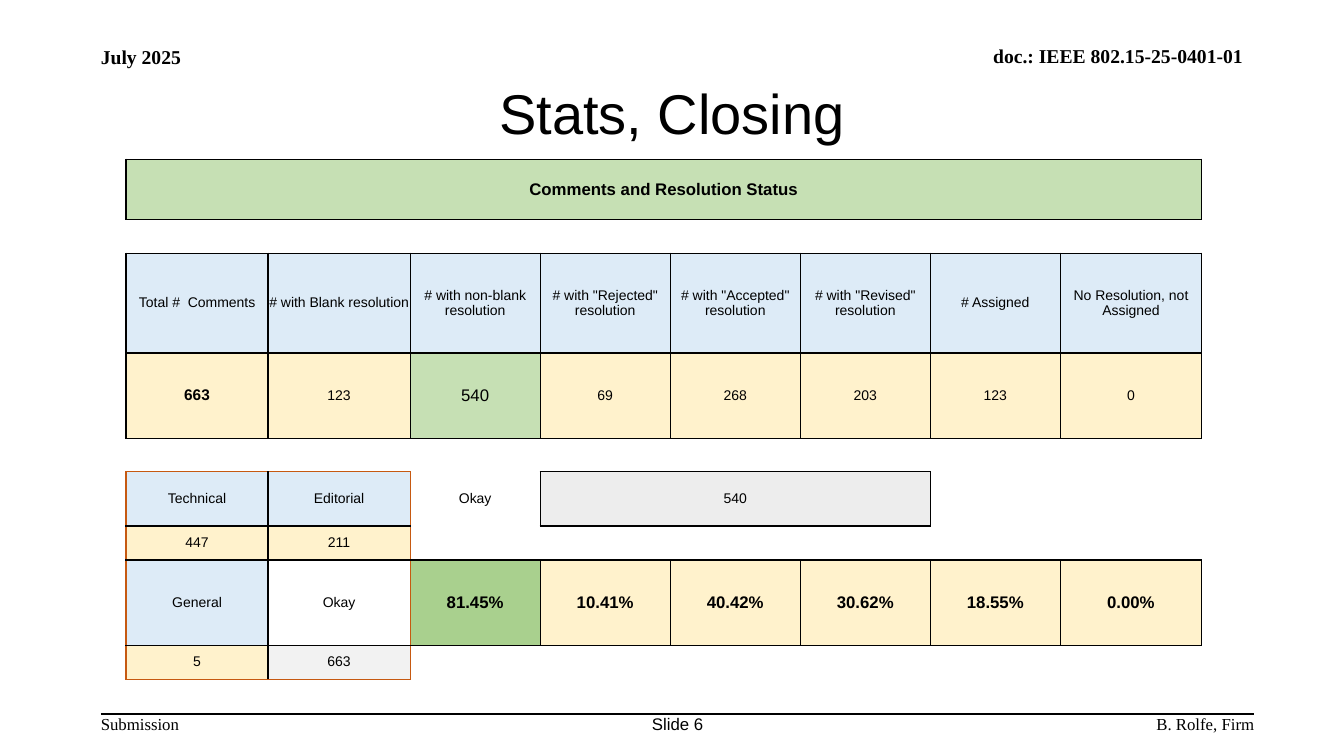
from lxml.etree import SubElement
from pptx import Presentation
from pptx.dml.color import RGBColor
from pptx.enum.shapes import MSO_CONNECTOR as Connector
from pptx.enum.text import MSO_ANCHOR as Anchor, PP_ALIGN as Align
from pptx.oxml.ns import qn
from pptx.util import Pt

BLACK, ORANGE = "000000", "C65911"
GREEN, DARK_GREEN = "C6E0B4", "A9D08E"
BLUE, CREAM, GRAY, PALE_GRAY, WHITE = "DDEBF7", "FFF2CC", "EDEDED", "F2F2F2", "FFFFFF"
SERIF, SANS = "Times New Roman", "Arial"

COLUMN_WIDTHS = [101.5] * 2 + [92.9] * 5 + [100.8]
ROW_HEIGHTS = [42.7, 24.3, 71.3, 60.9, 24.1, 38.6, 24.3, 60.9, 24.3]
BREAKDOWN_ROWS, BREAKDOWN_COLUMNS = range(5, 9), range(2)
SIDES = {"L": (0, -1), "R": (0, 1), "T": (-1, 0), "B": (1, 0)}

HEADINGS = ["Total #  Comments", "# with Blank resolution", "# with non-blank resolution",
            '# with "Rejected" resolution', '# with "Accepted" resolution',
            '# with "Revised" resolution', "# Assigned", "No Resolution, not Assigned"]
COUNTS = ["123", "69", "268", "203", "123", "0"]
SHARES = ["10.41%", "40.42%", "30.62%", "18.55%", "0.00%"]


def color(hex_text):
    return RGBColor.from_string(hex_text)


def write(frame, text, size=10, font=SANS, bold=False, align=Align.CENTER, anchor=Anchor.MIDDLE):
    frame.vertical_anchor = anchor
    paragraph = frame.paragraphs[0]
    paragraph.alignment = align
    run = paragraph.add_run()
    run.text = text
    run.font.size, run.font.name, run.font.bold = Pt(size), font, bold
    run.font.color.rgb = color(BLACK)


def add_label(slide, text, left, top, width, height, **text_format):
    frame = slide.shapes.add_textbox(Pt(left), Pt(top), Pt(width), Pt(height)).text_frame
    frame.word_wrap = True
    frame.margin_left = frame.margin_right = frame.margin_top = frame.margin_bottom = 0
    write(frame, text, **text_format)


def add_rule(slide, left, right, y):
    rule = slide.shapes.add_connector(Connector.STRAIGHT, Pt(left), Pt(y), Pt(right), Pt(y))
    rule.line.color.rgb = color(BLACK)
    rule.line.width = Pt(1)
    SubElement(rule._element.spPr, qn("a:effectLst"))


def status_cells():
    """Map (row, column) to text, fill and text format."""
    bold = {"size": 12, "bold": True}
    cells = {
        (0, 0): ("Comments and Resolution Status", GREEN, bold),
        (3, 0): ("663", CREAM, {"size": 11, "bold": True}),
        (3, 2): ("540", GREEN, {"size": 12}),
        (5, 0): ("Technical", BLUE, {}),
        (5, 1): ("Editorial", BLUE, {}),
        (5, 2): ("Okay", None, {}),
        (5, 3): ("540", GRAY, {}),
        (6, 0): ("447", CREAM, {}),
        (6, 1): ("211", CREAM, {}),
        (7, 0): ("General", BLUE, {}),
        (7, 1): ("Okay", WHITE, {}),
        (7, 2): ("81.45%", DARK_GREEN, bold),
        (8, 0): ("5", CREAM, {}),
        (8, 1): ("663", PALE_GRAY, {}),
    }
    for column, heading in enumerate(HEADINGS):
        cells[2, column] = (heading, BLUE, {})
    for column, count in zip((1, 3, 4, 5, 6, 7), COUNTS):
        cells[3, column] = (count, CREAM, {})
    for column, share in enumerate(SHARES, start=3):
        cells[7, column] = (share, CREAM, bold)
    return cells


def in_breakdown(row, column):
    return row in BREAKDOWN_ROWS and column in BREAKDOWN_COLUMNS


def edge_color(fills, place, neighbor):
    """Orange around the breakdown block, black around filled cells, else none."""
    crosses_block = in_breakdown(*place) != in_breakdown(*neighbor)
    above_or_below = place[1] == neighbor[1]
    # The block's outline gives way to black only where no edge is shared with it
    if crosses_block and (above_or_below or 2 in (place[1], neighbor[1]) or -1 in neighbor):
        return ORANGE
    return BLACK if fills.get(place) or fills.get(neighbor) else None


def set_border(cell, side, line_color):
    line = SubElement(cell._tc.get_or_add_tcPr(), qn(f"a:ln{side}"), w=str(Pt(1)))
    if line_color:
        SubElement(SubElement(line, qn("a:solidFill")), qn("a:srgbClr"), val=line_color)
    else:
        SubElement(line, qn("a:noFill"))


def add_status_table(slide, left, top):
    table = slide.shapes.add_table(
        len(ROW_HEIGHTS), len(COLUMN_WIDTHS), Pt(left), Pt(top),
        Pt(sum(COLUMN_WIDTHS)), Pt(sum(ROW_HEIGHTS))).table
    table.first_row = table.horz_banding = False
    for column, width in zip(table.columns, COLUMN_WIDTHS):
        column.width = Pt(width)
    for row, height in zip(table.rows, ROW_HEIGHTS):
        row.height = Pt(height)

    # Merged cells share one fill
    cells = status_cells()
    fills = {place: fill for place, (_, fill, _) in cells.items()}
    for row, first, last in ((0, 0, 7), (5, 3, 5)):
        table.cell(row, first).merge(table.cell(row, last))
        for column in range(first, last + 1):
            fills[row, column] = fills[row, first]

    # Borders, fills and text
    for row in range(len(ROW_HEIGHTS)):
        for column in range(len(COLUMN_WIDTHS)):
            cell, place = table.cell(row, column), (row, column)
            cell.margin_left = cell.margin_right = cell.margin_top = cell.margin_bottom = 0
            for side, (down, across) in SIDES.items():
                neighbor = (row + down, column + across)
                set_border(cell, side, edge_color(fills, place, neighbor))
            if fills.get(place):
                cell.fill.solid()
                cell.fill.fore_color.rgb = color(fills[place])
            else:
                cell.fill.background()
            if place in cells:
                text, _, text_format = cells[place]
                cell.vertical_anchor = Anchor.MIDDLE
                write(cell.text_frame, text, **text_format)


def add_title(slide, text):
    title = slide.shapes.title
    title.left, title.top, title.width, title.height = Pt(72), Pt(54), Pt(816), Pt(52)
    write(title.text_frame, text, size=40)


def main():
    presentation = Presentation()
    presentation.slide_width, presentation.slide_height = Pt(960), Pt(540)
    slide = presentation.slides.add_slide(presentation.slide_layouts[5])

    # Header
    header = {"size": 14, "font": SERIF, "bold": True}
    add_label(slide, "doc.: IEEE 802.15-25-0401-01", 448, 31, 440, 17,
              align=Align.RIGHT, anchor=Anchor.BOTTOM, **header)
    add_label(slide, "July 2025", 72, 32.4, 160, 17,
              align=Align.LEFT, anchor=Anchor.TOP, **header)

    # Title and table
    add_title(slide, "Stats, Closing")
    add_status_table(slide, 90, 113.8)

    # Footer
    add_rule(slide, 72, 896, 510)
    footer = {"size": 12, "anchor": Anchor.TOP}
    add_label(slide, "Submission", 72, 510, 75, 14, font=SERIF, align=Align.LEFT, **footer)
    add_label(slide, "Slide 6", 463, 510, 42, 14, **footer)
    add_label(slide, "B. Rolfe, Firm", 664, 510, 232, 14, font=SERIF, align=Align.RIGHT, **footer)

    presentation.save("out.pptx")


if __name__ == "__main__":
    main()
